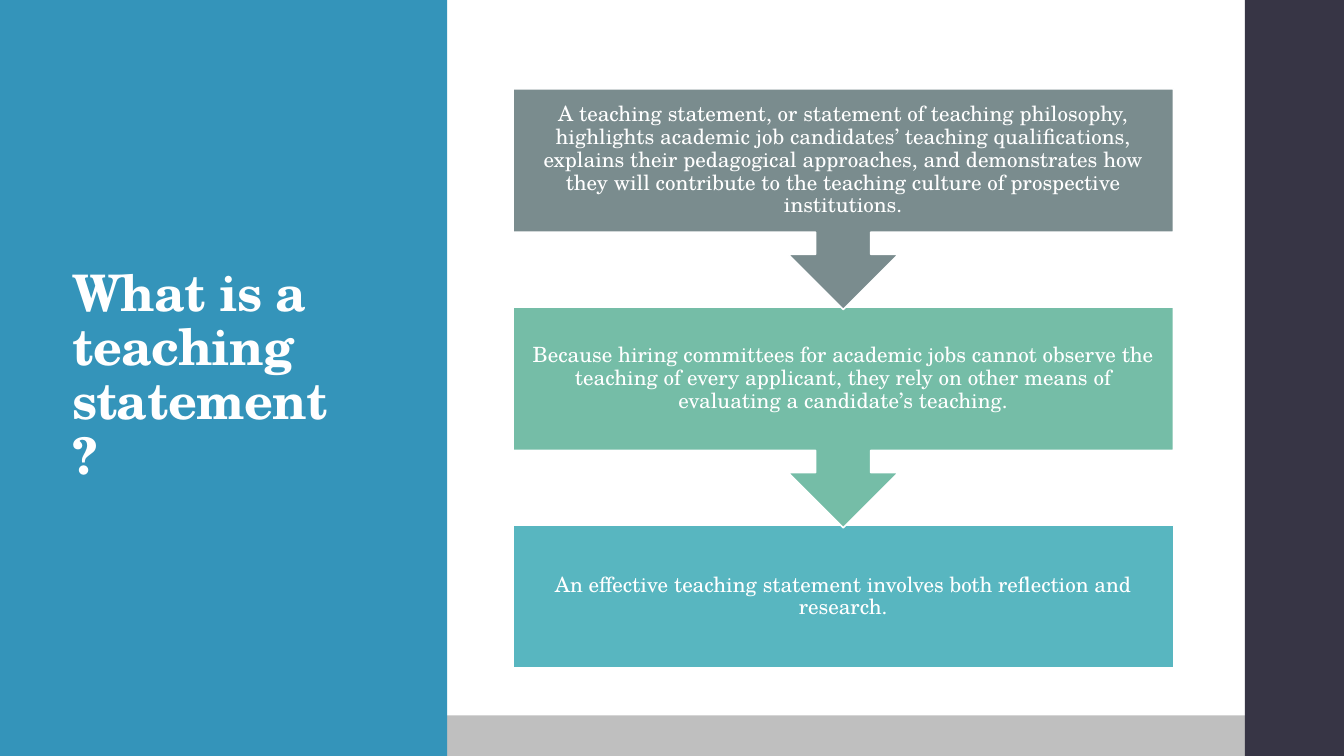
from dataclasses import dataclass

import pptx
import pptx.dml.color
import pptx.enum.shapes
import pptx.enum.text
import pptx.util
from pptx.util import Cm

COLORS = {
    "white": "FFFFFF",
    "footer": "BFBFBF",
    "title_panel": "3494BA",
    "side_panel": "373545",
    "definition": "7A8C8E",
    "reason": "75BDA7",
    "requirement": "58B6C0",
}
FONT = "TeX Gyre Schola"
STEP_LEFT, STEP_TOP, STEP_WIDTH = 12.93, 2.24, 16.64
STEP_PITCH, BOX_HEIGHT, CALLOUT_HEIGHT = 5.5, 3.6, 5.56
SHAPES = pptx.enum.shapes.MSO_SHAPE


@dataclass
class Panel:
    left: float
    top: float
    width: float
    height: float
    color: str


@dataclass
class Step:
    text: str
    color: str


PANELS = [
    Panel(0, 18.03, 33.87, 1.02, "footer"),
    Panel(0, 0, 11.27, 19.05, "title_panel"),
    Panel(31.37, 0, 2.5, 19.05, "side_panel"),
]
STEPS = [
    Step("A teaching statement, or statement of teaching philosophy, highlights "
         "academic job candidates’ teaching qualifications, explains their "
         "pedagogical approaches, and demonstrates how they will contribute to "
         "the teaching culture of prospective institutions.", "definition"),
    Step("Because hiring committees for academic jobs cannot observe the teaching "
         "of every applicant, they rely on other means of evaluating a "
         "candidate’s teaching.", "reason"),
    Step("An effective teaching statement involves both reflection and research.",
         "requirement"),
]


def rgb(name: str) -> pptx.dml.color.RGBColor:
    return pptx.dml.color.RGBColor.from_string(COLORS[name])


def write(shape, text: str, size: float, bold: bool, align, margins: tuple) -> None:
    """Fill a shape with one white, vertically centred paragraph."""
    frame = shape.text_frame
    frame.text = text
    frame.word_wrap = True
    frame.auto_size = pptx.enum.text.MSO_AUTO_SIZE.NONE
    frame.vertical_anchor = pptx.enum.text.MSO_ANCHOR.MIDDLE
    (frame.margin_left, frame.margin_top,
     frame.margin_right, frame.margin_bottom) = map(Cm, margins)
    paragraph = frame.paragraphs[0]
    paragraph.alignment = align
    paragraph.line_spacing = 0.9
    paragraph.font.name = FONT
    paragraph.font.size = pptx.util.Pt(size)
    paragraph.font.bold = bold
    paragraph.font.color.rgb = rgb("white")


def add_filled(slide, kind, left: float, top: float, width: float,
               height: float, color: str):
    shape = slide.shapes.add_shape(kind, Cm(left), Cm(top), Cm(width), Cm(height))
    shape.shadow.inherit = False
    shape.fill.solid()
    shape.fill.fore_color.rgb = rgb(color)
    shape.line.fill.background()
    return shape


def add_panel(slide, panel: Panel) -> None:
    add_filled(slide, SHAPES.RECTANGLE, panel.left, panel.top,
               panel.width, panel.height, panel.color)


def add_step(slide, index: int, step: Step) -> None:
    """Every step but the last points down to the next one."""
    last = index == len(STEPS) - 1
    kind = SHAPES.RECTANGLE if last else SHAPES.DOWN_ARROW_CALLOUT
    height = BOX_HEIGHT if last else CALLOUT_HEIGHT
    box = add_filled(slide, kind, STEP_LEFT, STEP_TOP + index * STEP_PITCH,
                     STEP_WIDTH, height, step.color)
    box.line.color.rgb = rgb("white")
    box.line.width = pptx.util.Pt(1.1)
    write(box, step.text, 15, False, pptx.enum.text.PP_ALIGN.CENTER, (0.3,) * 4)


def main() -> None:
    deck = pptx.Presentation()
    deck.slide_width, deck.slide_height = Cm(33.87), Cm(19.05)
    slide = deck.slides.add_slide(deck.slide_layouts[5])

    # Background panels
    for panel in PANELS:
        add_panel(slide, panel)

    # Title, brought in front of the panels
    title = slide.shapes.title
    slide.shapes._spTree.append(title._element)
    title.left, title.top, title.width, title.height = map(
        Cm, (1.57, 2.31, 7.54, 14.4))
    write(title, "What is a teaching statement?", 36, True,
          pptx.enum.text.PP_ALIGN.LEFT, (0.25, 0.08, 0.25, 0.13))
    title_run = title.text_frame.paragraphs[0].runs[0]
    title_run._r.get_or_add_rPr().set("spc", "-50")

    # Steps, from the bottom up so that each arrow lies over the next box
    for index, step in reversed(list(enumerate(STEPS))):
        add_step(slide, index, step)

    deck.save("out.pptx")


if __name__ == "__main__":
    main()
